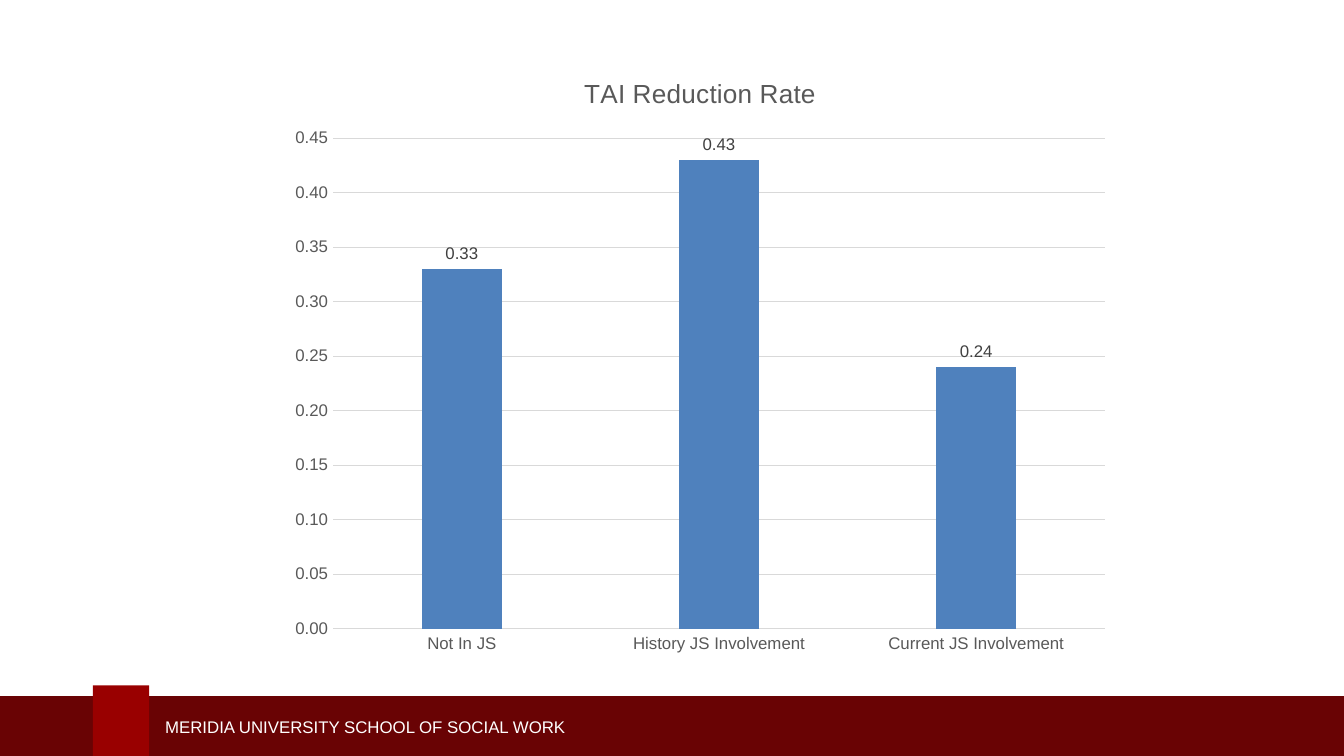
from lxml import etree
from pptx import Presentation
from pptx.chart.data import CategoryChartData
from pptx.dml.color import RGBColor
from pptx.enum import chart as ch, shapes, text
from pptx.oxml import ns
from pptx.util import Inches, Pt

DARK_RED = RGBColor(0x69, 0x03, 0x04)
CRIMSON = RGBColor(0x99, 0x00, 0x00)
WHITE = RGBColor(0xFF, 0xFF, 0xFF)
BAR_BLUE = RGBColor(0x4F, 0x81, 0xBD)
AXIS_GREY = RGBColor(0x59, 0x59, 0x59)
LABEL_GREY = RGBColor(0x40, 0x40, 0x40)
GRID_GREY = RGBColor(0xD9, 0xD9, 0xD9)
FONT = "Arial"

RATES = {
    "Not In JS": 0.33,
    "History JS Involvement": 0.43,
    "Current JS Involvement": 0.24,
}
CHART_BOX = (2.07, 0.39, 6.28, 4.57)
PLOT_BOX = (0.41, 0.64, 5.74, 3.65)  # inches, within the chart


def apply(target, values):
    for name, value in values.items():
        setattr(target, name, value)


def style_font(font, size, color):
    apply(font, {"name": FONT, "size": Pt(size), "bold": False})
    font.color.rgb = color


def style_line(line, color):
    line.color.rgb = color
    line.width = Pt(0.75)


def add_band(slide, box, color):
    band = slide.shapes.add_shape(
        shapes.MSO_SHAPE.RECTANGLE, *map(Inches, box))
    band.shadow.inherit = False
    band.fill.solid()
    band.fill.fore_color.rgb = color
    band.line.fill.background()


def add_caption(slide, box, wording):
    frame = slide.shapes.add_textbox(*map(Inches, box)).text_frame
    apply(frame, {"word_wrap": True,
                  "vertical_anchor": text.MSO_ANCHOR.MIDDLE})
    caption = frame.paragraphs[0].add_run()
    caption.text = wording
    style_font(caption.font, 9, WHITE)


def place_plot_area(chart):
    """Fix the inner plot area as fractions of the chart."""
    plot_area = chart.plots[0]._element.getparent()
    for old in plot_area.findall(ns.qn("c:layout")):
        plot_area.remove(old)
    layout = etree.Element(ns.qn("c:layout"))
    manual = etree.SubElement(layout, ns.qn("c:manualLayout"))
    settings = {"layoutTarget": "inner", "xMode": "edge", "yMode": "edge"}
    for tag, length, whole in zip("xywh", PLOT_BOX, CHART_BOX[2:] * 2):
        settings[tag] = length / whole
    for tag, value in settings.items():
        etree.SubElement(manual, ns.qn(f"c:{tag}"), val=str(value))
    plot_area.insert(0, layout)


def add_rate_chart(slide):
    data = CategoryChartData(number_format="0.00")
    data.categories = list(RATES)
    data.add_series("Series 1", list(RATES.values()))
    chart = slide.shapes.add_chart(
        ch.XL_CHART_TYPE.COLUMN_CLUSTERED, *map(Inches, CHART_BOX),
        data).chart
    chart.has_legend = False
    style_font(chart.font, 10, AXIS_GREY)

    # Title
    chart.has_title = True
    title = chart.chart_title.text_frame.paragraphs[0].add_run()
    title.text = "TAI Reduction Rate"
    style_font(title.font, 14, AXIS_GREY)
    chart.chart_title.include_in_layout = False

    # Axes
    rates, groups = chart.value_axis, chart.category_axis
    for axis in (rates, groups):
        apply(axis, {"major_tick_mark": ch.XL_TICK_MARK.NONE,
                     "minor_tick_mark": ch.XL_TICK_MARK.NONE})
        style_font(axis.tick_labels.font, 9, AXIS_GREY)
    apply(rates, {"minimum_scale": 0, "maximum_scale": 0.45,
                  "major_unit": 0.05, "has_major_gridlines": True})
    apply(rates.tick_labels, {"number_format": "0.00",
                              "number_format_is_linked": False})
    rates.format.line.fill.background()
    style_line(rates.major_gridlines.format.line, GRID_GREY)
    style_line(groups.format.line, GRID_GREY)

    # Columns and their labels
    columns = chart.plots[0]
    apply(columns, {"gap_width": 219, "overlap": -27,
                    "vary_by_categories": False, "has_data_labels": True})
    fill = columns.series[0].format.fill
    fill.solid()
    fill.fore_color.rgb = BAR_BLUE
    apply(columns.data_labels, {
        "show_value": True, "number_format": "0.00",
        "number_format_is_linked": False,
        "position": ch.XL_LABEL_POSITION.OUTSIDE_END})
    style_font(columns.data_labels.font, 9, LABEL_GREY)
    place_plot_area(chart)


def main():
    # Widescreen 16:9 slide
    deck = Presentation()
    width = Inches(10)
    apply(deck, {"slide_width": width, "slide_height": width * 9 // 16})
    slide = deck.slides.add_slide(deck.slide_layouts[6])

    # Footer
    add_band(slide, (-0.03, 5.18, 10.09, 0.5), DARK_RED)
    add_band(slide, (0.69, 5.1, 0.42, 0.58), CRIMSON)
    add_caption(slide, (1.13, 5.28, 3.95, 0.25),
                "MERIDIA UNIVERSITY SCHOOL OF SOCIAL WORK")

    # Chart
    add_rate_chart(slide)
    deck.save("out.pptx")


if __name__ == "__main__":
    main()
